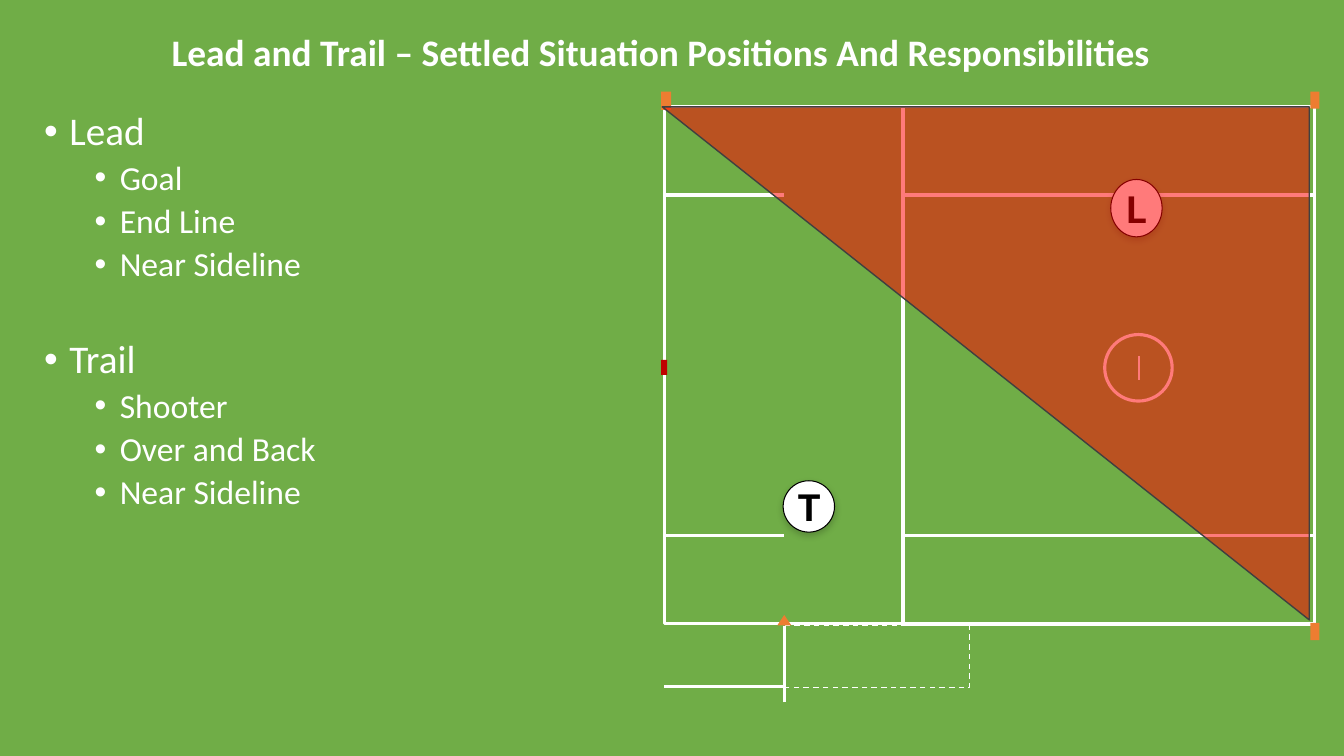
from lxml.etree import SubElement
from pptx import Presentation
from pptx.dml.color import RGBColor
from pptx.enum.dml import MSO_LINE
from pptx.enum.shapes import MSO_CONNECTOR, MSO_SHAPE as SHAPE
from pptx.enum.text import MSO_ANCHOR as ANCHOR, PP_ALIGN as ALIGN
from pptx.oxml.ns import qn
from pptx.util import Pt

GRASS = RGBColor(0x70, 0xAD, 0x47)
WHITE = RGBColor(0xFF, 0xFF, 0xFF)
BLACK = RGBColor(0x00, 0x00, 0x00)
ORANGE = RGBColor(0xED, 0x7D, 0x31)
GOAL_RED = RGBColor(0xC0, 0x00, 0x00)
ZONE_RED = RGBColor(0xFF, 0x00, 0x00)
DARK_GREY = RGBColor(0x40, 0x40, 0x40)

DUTIES = [
    ("Lead", ["Goal", "End Line", "Near Sideline"]),
    ("Trail", ["Shooter", "Over and Back", "Near Sideline"]),
]


def write(para, text, size, color=WHITE, font="Calibri", bold=False,
          align=None, spacing=None, before=None, indent=None):
    if indent is not None:
        props = para._p.get_or_add_pPr()
        props.set("marL", str(Pt(indent)))
        props.set("indent", str(Pt(-18)))
        SubElement(props, qn("a:buFont"), typeface="Arial")
        SubElement(props, qn("a:buChar"), char="•")
    para.alignment = align
    para.line_spacing = spacing
    if before is not None:
        para.space_before = Pt(before)
    span = para.add_run()
    span.text = text
    span.font.name = font
    span.font.size = Pt(size)
    span.font.bold = bold
    span.font.color.rgb = color


def style(shape, fill=None, line=None, weight=2.25):
    shape.shadow.inherit = False
    if fill is None:
        shape.fill.background()
    else:
        shape.fill.solid()
        shape.fill.fore_color.rgb = fill
    if line is None:
        shape.line.fill.background()
    else:
        shape.line.color.rgb = line
        shape.line.width = Pt(weight)
    return shape


def add_shape(slide, kind, left, top, width, height, **look):
    shape = slide.shapes.add_shape(kind, Pt(left), Pt(top), Pt(width), Pt(height))
    return style(shape, **look)


def add_line(slide, x1, y1, x2, y2, weight=2.25):
    line = slide.shapes.add_connector(
        MSO_CONNECTOR.STRAIGHT, Pt(x1), Pt(y1), Pt(x2), Pt(y2))
    line.line.color.rgb = WHITE
    line.line.width = Pt(weight)
    SubElement(line._element.spPr, qn("a:effectLst"))


def add_text_box(slide, left, top, width, height, anchor):
    box = slide.shapes.add_textbox(Pt(left), Pt(top), Pt(width), Pt(height))
    box.text_frame.word_wrap = True
    box.text_frame.vertical_anchor = anchor
    return box.text_frame


def add_title(slide, left, top, width, height):
    frame = add_text_box(slide, left, top, width, height, ANCHOR.MIDDLE)
    write(frame.paragraphs[0],
          "Lead and Trail – Settled Situation Positions And Responsibilities",
          26.7, bold=True, align=ALIGN.CENTER, spacing=0.9)


def add_duties(slide, left, top, width, height):
    frame = add_text_box(slide, left, top, width, height, ANCHOR.TOP)
    para, before = frame.paragraphs[0], None
    for role, tasks in DUTIES:
        write(para, role, 28, spacing=0.9, before=before, indent=18)
        for task in tasks:
            para = frame.add_paragraph()
            para.level = 1
            write(para, task, 24, spacing=0.9, before=5, indent=54)
        if role != DUTIES[-1][0]:
            para, before = frame.add_paragraph(), 40


def add_field(slide, left, top, width, height):
    midline, wing, bench = 170.6, 63, 85.7
    half = width - midline
    for x, y, w, h in [
        (0, 0, midline, height),
        (midline, 0, half, wing),
        (midline, height - wing, half, wing),
        (midline, wing, half, height - 2 * wing),
    ]:
        add_shape(slide, SHAPE.RECTANGLE, left + x, top + y, w, h, line=WHITE)

    area = add_shape(slide, SHAPE.RECTANGLE, left + bench, top + height + 0.7,
                     132.5, 44.6, line=WHITE, weight=1)
    area.line.dash_style = MSO_LINE.DASH

    cone = slide.shapes.build_freeform(Pt(left + bench), Pt(top + height - 6.5))
    cone.add_line_segments([
        (Pt(left + bench - 5), Pt(top + height + 1)),
        (Pt(left + bench + 5), Pt(top + height + 1)),
    ])
    style(cone.convert_to_shape(), fill=ORANGE)

    add_shape(slide, SHAPE.OVAL, left + 314.6, top + 162.7, 48.2, 47.5, line=WHITE)
    add_line(slide, left + 339.1, top + 195.1, left + 339.1, top + 177.9, weight=1.5)
    add_line(slide, left + bench, top + height + 56, left + bench, top + height + 1.4)
    for y in (wing, height - wing, height + 44.6):
        add_line(slide, left, top + y, left + bench, top + y)

    for x, y, w, h, color in [
        (width - 2.9, -10.8, 6.5, 12.2, ORANGE),
        (width - 2.9, height - 0.7, 6.5, 12.2, ORANGE),
        (-2.2, -10.8, 7.2, 13, ORANGE),
        (-2.2, 180.7, 4.3, 10.8, GOAL_RED),
    ]:
        add_shape(slide, SHAPE.RECTANGLE, left + x, top + y, w, h, fill=color)


def add_official(slide, letter, left, top, width, height):
    marker = add_shape(slide, SHAPE.OVAL, left, top, width, height,
                       fill=WHITE, line=BLACK, weight=0.75)
    effects = marker._element.spPr.find(qn("a:effectLst"))
    shadow = SubElement(effects, qn("a:outerShdw"), blurRad=str(Pt(5)),
                        dist=str(Pt(2)), dir="5400000", rotWithShape="0")
    color = SubElement(shadow, qn("a:srgbClr"), val=str(BLACK))
    SubElement(color, qn("a:alpha"), val="20000")
    frame = marker.text_frame
    frame.margin_left = frame.margin_right = Pt(5)
    frame.margin_top = frame.margin_bottom = Pt(5)
    frame.vertical_anchor = ANCHOR.MIDDLE
    write(frame.paragraphs[0], letter, 26.7, color=BLACK, font="Roboto",
          bold=True, align=ALIGN.CENTER)


def add_lead_zone(slide, left, top, width, height):
    zone = add_shape(slide, SHAPE.RIGHT_TRIANGLE, left, top, width, height,
                     fill=ZONE_RED, line=DARK_GREY, weight=1)
    zone.rotation = 180
    color = zone._element.spPr.find(qn("a:solidFill")).find(qn("a:srgbClr"))
    SubElement(color, qn("a:alpha"), val="52000")


def main():
    deck = Presentation()
    deck.slide_width, deck.slide_height = Pt(960), Pt(540)
    slide = deck.slides.add_slide(deck.slide_layouts[6])
    slide.background.fill.solid()
    slide.background.fill.fore_color.rgb = GRASS

    add_field(slide, 474.5, 76.3, 464.4, 369.4)
    add_duties(slide, 24.5, 76.3, 424, 396.7)
    add_title(slide, 92, 21, 761, 36)
    add_official(slide, "T", 559.4, 343.4, 36.7, 36.7)
    add_official(slide, "L", 793.4, 128.2, 36.7, 41)
    add_lead_zone(slide, 473, 76.3, 462.2, 366.5)
    deck.save("out.pptx")


if __name__ == "__main__":
    main()
